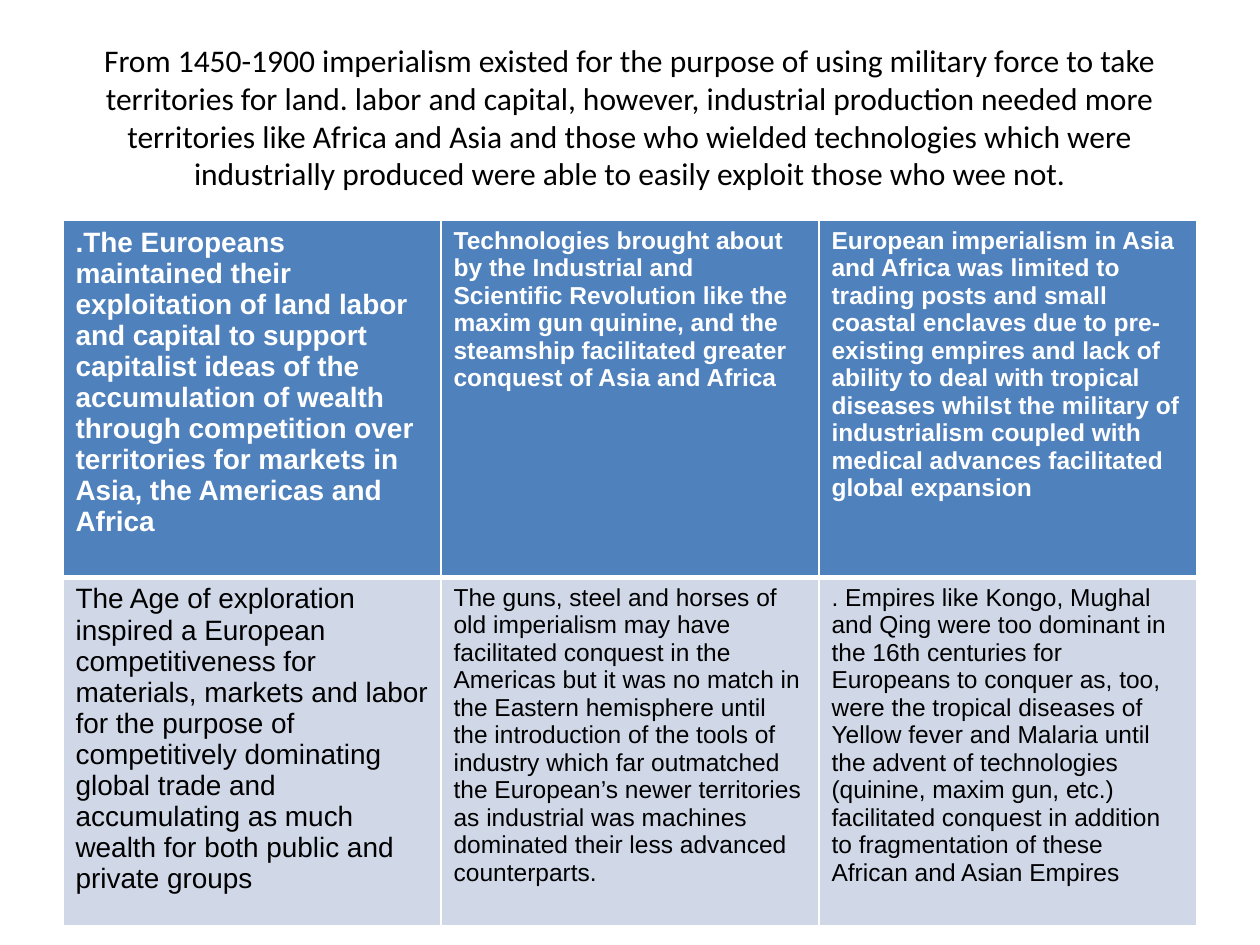
from dataclasses import dataclass

from lxml import etree
from pptx import Presentation
from pptx.dml.color import RGBColor
from pptx.enum.text import MSO_ANCHOR, PP_ALIGN
from pptx.oxml.ns import qn
from pptx.util import Pt

CENTER = PP_ALIGN.CENTER
MIDDLE = MSO_ANCHOR.MIDDLE


@dataclass(frozen=True)
class Theme:
    title_font: str = "Calibri"
    table_font: str = "Arial"
    title_size: int = 18
    column_sizes: tuple = (16, 14, 14)
    black: str = "000000"
    white: str = "FFFFFF"
    header_fill: str = "4F81BD"
    body_fill: str = "D0D8E8"
    thin_line: int = 1
    thick_line: int = 3


@dataclass(frozen=True)
class Box:
    left: float
    top: float
    width: float
    height: float

    def lengths(self):
        return Pt(self.left), Pt(self.top), Pt(self.width), Pt(self.height)


THEME = Theme()
TITLE_BOX = Box(36, 21.6, 648, 90)
TABLE_BOX = Box(36, 126, 648, 401)
ROW_HEIGHTS = (204, 197)

TITLE = (
    "From 1450-1900 imperialism existed for the purpose of using military force to take "
    "territories for land. labor and capital, however, industrial production needed more "
    "territories like Africa and Asia and those who wielded technologies which were "
    "industrially produced were able to easily exploit those who wee not."
)
ROWS = (
    (
        ".The Europeans maintained their exploitation of land labor and capital to support "
        "capitalist ideas of the accumulation of wealth through competition over territories "
        "for markets in Asia, the Americas and Africa",
        "Technologies brought about by the Industrial and Scientific Revolution like the maxim "
        "gun quinine, and the steamship facilitated greater conquest of Asia and Africa",
        "European imperialism in Asia and Africa was limited to trading posts and small coastal "
        "enclaves due to pre-existing empires and lack of ability to deal with tropical diseases "
        "whilst the military of industrialism coupled with medical advances facilitated global "
        "expansion",
    ),
    (
        "The Age of exploration inspired a European competitiveness for materials, markets and "
        "labor for the purpose of competitively dominating global trade and accumulating as much "
        "wealth for both public and private groups",
        "The guns, steel and horses of old imperialism may have facilitated conquest in the "
        "Americas but it was no match in the Eastern hemisphere until the introduction of the "
        "tools of industry which far outmatched the European’s newer territories as industrial "
        "was machines dominated their less advanced counterparts.",
        ". Empires like Kongo, Mughal and Qing were too dominant in the 16th centuries for "
        "Europeans to conquer as, too, were the tropical diseases of Yellow fever and Malaria "
        "until the advent of technologies (quinine, maxim gun, etc.) facilitated conquest in "
        "addition to fragmentation of these African and Asian Empires",
    ),
)


def style_font(font, name, size, color, bold=False):
    font.name = name
    font.size = Pt(size)
    font.bold = bold
    font.color.rgb = RGBColor.from_string(color)


def add_title(slide, box):
    frame = slide.shapes.add_textbox(*box.lengths()).text_frame
    frame.word_wrap = True
    frame.vertical_anchor = MIDDLE
    paragraph = frame.paragraphs[0]
    paragraph.text = TITLE
    paragraph.alignment = CENTER
    style_font(paragraph.font, THEME.title_font, THEME.title_size, THEME.black)


def set_borders(cell, top, bottom):
    properties = cell._tc.get_or_add_tcPr()
    widths = {"lnL": THEME.thin_line, "lnR": THEME.thin_line, "lnT": top, "lnB": bottom}
    for tag, width in widths.items():
        line = etree.SubElement(properties, qn(f"a:{tag}"), w=str(Pt(width)))
        fill = etree.SubElement(line, qn("a:solidFill"))
        etree.SubElement(fill, qn("a:srgbClr"), val=THEME.white)


def add_comparison_table(slide, box):
    column_count = len(ROWS[0])
    table = slide.shapes.add_table(len(ROWS), column_count, *box.lengths()).table
    for column in table.columns:
        column.width = Pt(box.width / column_count)
    for row_index, texts in enumerate(ROWS):
        table.rows[row_index].height = Pt(ROW_HEIGHTS[row_index])
        header = row_index == 0
        fill_color = THEME.header_fill if header else THEME.body_fill
        text_color = THEME.white if header else THEME.black
        top, bottom = THEME.thin_line, THEME.thick_line
        if not header:
            top, bottom = bottom, top
        for column_index, text in enumerate(texts):
            cell = table.cell(row_index, column_index)
            set_borders(cell, top, bottom)
            cell.fill.solid()
            cell.fill.fore_color.rgb = RGBColor.from_string(fill_color)
            paragraph = cell.text_frame.paragraphs[0]
            paragraph.text = text
            size = THEME.column_sizes[column_index]
            style_font(paragraph.font, THEME.table_font, size, text_color, header)


def main():
    presentation = Presentation()
    presentation.slide_width = Pt(720)
    presentation.slide_height = Pt(540)
    slide = presentation.slides.add_slide(presentation.slide_layouts[6])
    add_title(slide, TITLE_BOX)
    add_comparison_table(slide, TABLE_BOX)
    presentation.save("out.pptx")


if __name__ == "__main__":
    main()
